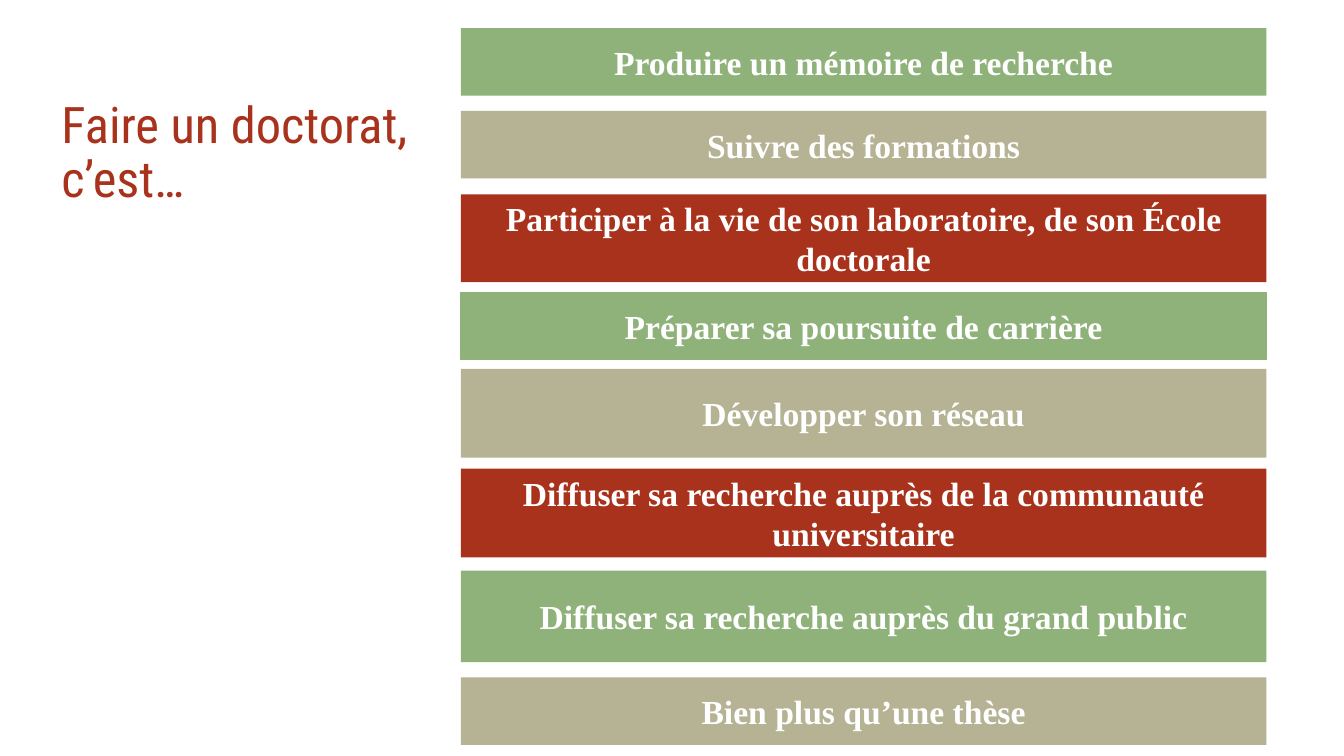
from dataclasses import dataclass
from itertools import cycle

from pptx import Presentation
from pptx.dml.color import RGBColor
from pptx.enum.shapes import MSO_SHAPE
from pptx.enum.text import MSO_ANCHOR, MSO_AUTO_SIZE, PP_ALIGN
from pptx.slide import Slide
from pptx.text.text import TextFrame
from pptx.util import Inches, Pt

COLORS = {"green": "8FB27A", "beige": "B6B294", "red": "A8321B", "white": "FFFFFF"}
BAR_LEFT, BAR_WIDTH = 4.57, 7.99


@dataclass
class Bar:
    text: str
    top: float
    height: float = 0.67
    outlined: bool = False


BARS = [
    Bar("Produire un mémoire de recherche", 0.28),
    Bar("Suivre des formations", 1.1),
    Bar("Participer à la vie de son laboratoire, de son École doctorale", 1.93, 0.87),
    Bar("Préparer sa poursuite de carrière", 2.9, outlined=True),
    Bar("Développer son réseau", 3.66, 0.88),
    Bar("Diffuser sa recherche auprès de la communauté universitaire", 4.65, 0.88),
    Bar("Diffuser sa recherche auprès du grand public", 5.66, 0.91),
    Bar("Bien plus qu’une thèse", 6.72),
]


def rgb(name: str) -> RGBColor:
    return RGBColor.from_string(COLORS[name])


def format_text(frame: TextFrame, font_name: str, size: int, color: str,
                bold: bool, align: PP_ALIGN) -> None:
    frame.word_wrap = True
    for para in frame.paragraphs:
        para.alignment = align
        for span in para.runs:
            span.font.name = font_name
            span.font.size = Pt(size)
            span.font.bold = bold
            span.font.color.rgb = rgb(color)


def add_title(page: Slide) -> None:
    title = page.shapes.title
    title.left, title.top = Inches(0.48), Inches(1.1)
    title.width, title.height = Inches(4.09), Inches(1.1)
    frame = title.text_frame
    frame.text = "Faire un doctorat, \vc’est…"
    frame.auto_size = MSO_AUTO_SIZE.NONE
    frame.vertical_anchor = MSO_ANCHOR.BOTTOM
    frame.margin_left = frame.margin_right = Inches(0.13)
    frame.margin_top = frame.margin_bottom = Inches(0.13)
    frame.paragraphs[0].line_spacing = 0.9
    format_text(frame, "Roboto Condensed", 36, "red", False, PP_ALIGN.LEFT)


def add_bar(page: Slide, bar: Bar, color: str) -> None:
    box = page.shapes.add_shape(MSO_SHAPE.RECTANGLE, Inches(BAR_LEFT), Inches(bar.top),
                                Inches(BAR_WIDTH), Inches(bar.height))
    box.shadow.inherit = False
    box.fill.solid()
    box.fill.fore_color.rgb = rgb(color)
    if bar.outlined:
        box.line.color.rgb = rgb(color)
        box.line.width = Pt(1)
    else:
        box.line.fill.background()
    box.text_frame.text = bar.text
    box.text_frame.vertical_anchor = MSO_ANCHOR.MIDDLE
    format_text(box.text_frame, "Times New Roman", 24, "white", True, PP_ALIGN.CENTER)


def main() -> None:
    deck = Presentation()
    deck.slide_width, deck.slide_height = Inches(13.33), Inches(7.5)
    page = deck.slides.add_slide(deck.slide_layouts.get_by_name("Title Only"))
    page.background.fill.solid()
    page.background.fill.fore_color.rgb = rgb("white")
    add_title(page)
    for bar, color in zip(BARS, cycle(["green", "beige", "red"])):
        add_bar(page, bar, color)
    deck.save("out.pptx")


if __name__ == "__main__":
    main()
